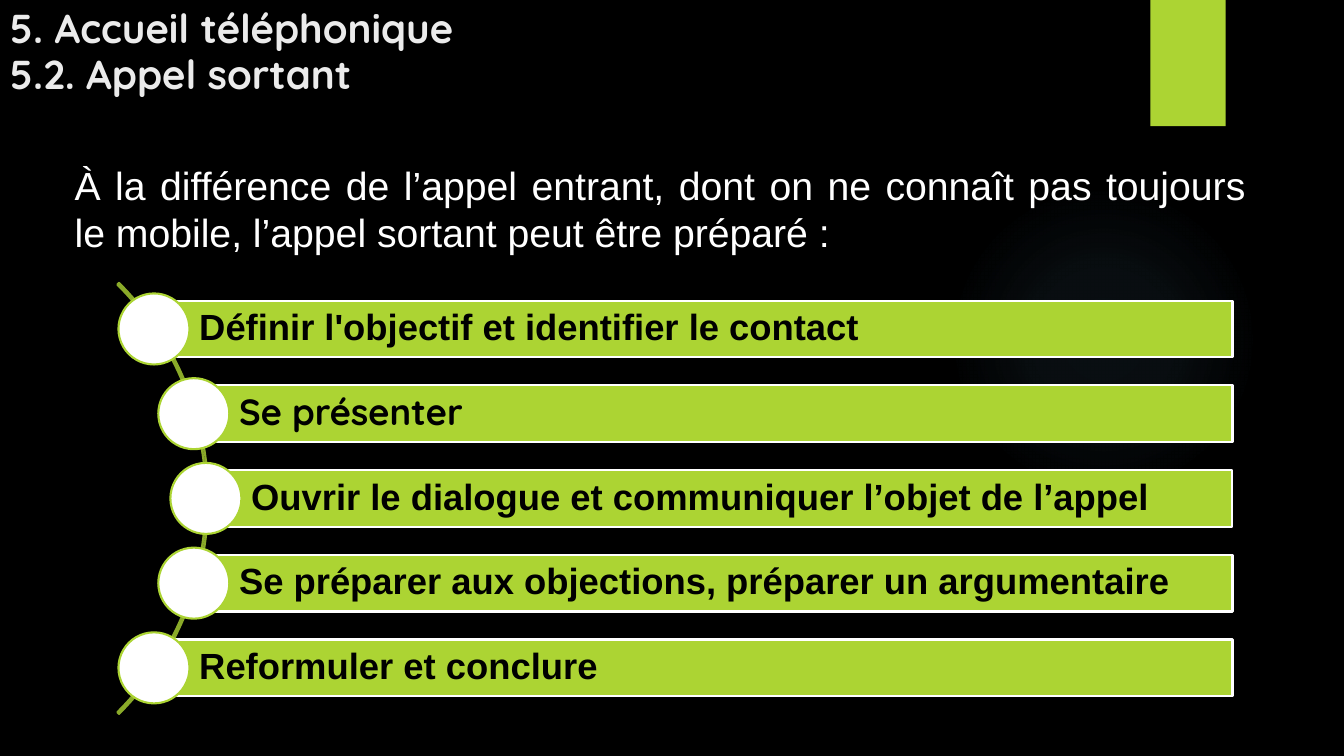
"""Builds the slide on preparing an outgoing phone call."""
from dataclasses import dataclass
from math import sqrt
from typing import Any

from lxml import etree
from pptx import Presentation
from pptx.dml.color import RGBColor
from pptx.enum.shapes import MSO_SHAPE
from pptx.enum.text import MSO_ANCHOR, PP_ALIGN
from pptx.oxml import parse_xml
from pptx.oxml.ns import nsdecls
from pptx.util import Cm, Pt

RECTANGLE, OVAL, ARC = MSO_SHAPE.RECTANGLE, MSO_SHAPE.OVAL, MSO_SHAPE.BLOCK_ARC
MIDDLE, BOTTOM = MSO_ANCHOR.MIDDLE, MSO_ANCHOR.BOTTOM
LEFT, JUSTIFY = PP_ALIGN.LEFT, PP_ALIGN.JUSTIFY


@dataclass(frozen=True)
class Theme:
    """Colours, fonts and sizes of the slide."""
    background: str = "000000"
    accent: str = "ACD433"
    arc: str = "8AAA29"
    white: str = "FFFFFF"
    title: str = "EBEBEB"
    step_text: str = "000000"
    glow: str = "7AC4F0"
    body_font: str = "Arial"
    heading_font: str = "Quicksand"
    title_size: float = 28.8
    intro_size: float = 28
    step_size: float = 26
    outline: float = 1.5


@dataclass(frozen=True)
class Box:
    """A frame in centimetres."""
    left: float
    top: float
    width: float
    height: float


@dataclass(frozen=True)
class TextStyle:
    """The look of one text."""
    font: str
    size: float
    color: str
    bold: bool = False
    align: PP_ALIGN = LEFT
    spacing: float = 1.0


@dataclass(frozen=True)
class Step:
    """One step of the call, with its font."""
    label: str
    font: str


THEME = Theme()
STEPS = (
    Step("Définir l'objectif et identifier le contact", THEME.body_font),
    Step("Se présenter", THEME.heading_font),
    Step("Ouvrir le dialogue et communiquer l’objet de l’appel", THEME.body_font),
    Step("Se préparer aux objections, préparer un argumentaire", THEME.body_font),
    Step("Reformuler et conclure", THEME.body_font),
)
ARC_X, ARC_Y, ARC_RADIUS = -2.43, 12.56, 7.68
NODE_ORBIT, NODE_SIZE = 7.62, 1.79
STEP_PITCH, BAR_HEIGHT, BAR_RIGHT = 2.135, 1.43, 31.06
GLOW_STOPS = ((0, 7), (36, 6), (69, 0))


def set_all(target: Any, values: dict[str, Any]) -> None:
    """Set every attribute named in the values."""
    for name, value in values.items():
        setattr(target, name, value)


def frame(box: Box) -> tuple[Cm, Cm, Cm, Cm]:
    """Give a box as slide lengths."""
    return Cm(box.left), Cm(box.top), Cm(box.width), Cm(box.height)


def add_form(slide: Any, kind: MSO_SHAPE, box: Box, fill: str = "", line: str = "") -> Any:
    """Add a preset shape without shadow."""
    form = slide.shapes.add_shape(kind, *frame(box))
    form.shadow.inherit = False
    if fill:
        form.fill.solid()
        form.fill.fore_color.rgb = RGBColor.from_string(fill)
    else:
        form.fill.background()
    if line:
        form.line.color.rgb = RGBColor.from_string(line)
        form.line.width = Pt(THEME.outline)
    else:
        form.line.fill.background()
    return form


def write(holder: Any, text: str, style: TextStyle, layout: dict[str, Any]) -> None:
    """Write one formatted paragraph into a shape."""
    text_frame = holder.text_frame
    set_all(text_frame, {"word_wrap": True, **layout})
    paragraph = text_frame.paragraphs[0]
    paragraph.text = text
    set_all(paragraph, {"alignment": style.align, "line_spacing": style.spacing})
    for run in paragraph.runs:
        set_all(run.font, {"name": style.font, "size": Pt(style.size), "bold": style.bold})
        run.font.color.rgb = RGBColor.from_string(style.color)


def add_glow(slide: Any, box: Box) -> None:
    """Add a faint radial glow."""
    glow = add_form(slide, OVAL, box, THEME.glow)
    stops = "".join(
        f'<a:gs pos="{place * 1000}"><a:srgbClr val="{THEME.glow}">'
        f'<a:alpha val="{alpha * 1000}"/></a:srgbClr></a:gs>'
        for place, alpha in GLOW_STOPS
    )
    gradient = parse_xml(
        f'<a:gradFill {nsdecls("a")}><a:gsLst>{stops}</a:gsLst><a:path path="circle">'
        '<a:fillToRect l="50000" t="50000" r="50000" b="50000"/></a:path></a:gradFill>'
    )
    properties = glow.element.spPr
    solid = properties.find(etree.QName(gradient).text.replace("gradFill", "solidFill"))
    properties.replace(solid, gradient)


def add_step(slide: Any, step: Step, offset: float) -> None:
    """Add a bar and its round node on the arc."""
    node_x = ARC_X + sqrt(NODE_ORBIT**2 - offset**2)
    node_y = ARC_Y + offset
    bar_box = Box(node_x, node_y - BAR_HEIGHT / 2, BAR_RIGHT - node_x, BAR_HEIGHT)
    bar = add_form(slide, RECTANGLE, bar_box, THEME.accent, THEME.white)
    style = TextStyle(step.font, THEME.step_size, THEME.step_text, True, spacing=0.9)
    margins = dict.fromkeys(("margin_top", "margin_right", "margin_bottom"), Cm(0.17))
    write(bar, step.label, style,
          {"vertical_anchor": MIDDLE, "margin_left": Cm(1.14), **margins})
    half = NODE_SIZE / 2
    node_box = Box(node_x - half, node_y - half, NODE_SIZE, NODE_SIZE)
    add_form(slide, OVAL, node_box, THEME.white, THEME.accent)


def main() -> None:
    """Build and save the slide."""
    deck = Presentation()
    set_all(deck, {"slide_width": Cm(33.87), "slide_height": Cm(19.05)})
    slide = deck.slides.add_slide(deck.slide_layouts[6])
    slide.background.fill.solid()
    slide.background.fill.fore_color.rgb = RGBColor.from_string(THEME.background)

    add_glow(slide, Box(23.9, 4.65, 7.82, 7.82))
    add_form(slide, RECTANGLE, Box(28.99, 0, 1.9, 3.18), THEME.accent)

    title = slide.shapes.add_textbox(*frame(Box(0, 0, 32.9, 2.62)))
    write(title, "5. Accueil téléphonique\v5.2. Appel sortant",
          TextStyle(THEME.heading_font, THEME.title_size, THEME.title, True, spacing=0.95),
          {"vertical_anchor": BOTTOM})
    intro = slide.shapes.add_textbox(*frame(Box(1.63, 3.94, 30, 2.64)))
    write(intro, "À la différence de l’appel entrant, dont on ne connaît pas toujours "
          "le mobile, l’appel sortant peut être préparé\u00a0:",
          TextStyle(THEME.body_font, THEME.intro_size, THEME.white, align=JUSTIFY), {})

    arc_box = Box(ARC_X - ARC_RADIUS, ARC_Y - ARC_RADIUS, 2 * ARC_RADIUS, 2 * ARC_RADIUS)
    arc = add_form(slide, ARC, arc_box, line=THEME.arc)
    for index, value in enumerate((189, 27, 0.004)):
        arc.adjustments[index] = value
    for index, step in enumerate(STEPS):
        add_step(slide, step, (index - len(STEPS) // 2) * STEP_PITCH)
    deck.save("out.pptx")


if __name__ == "__main__":
    main()
